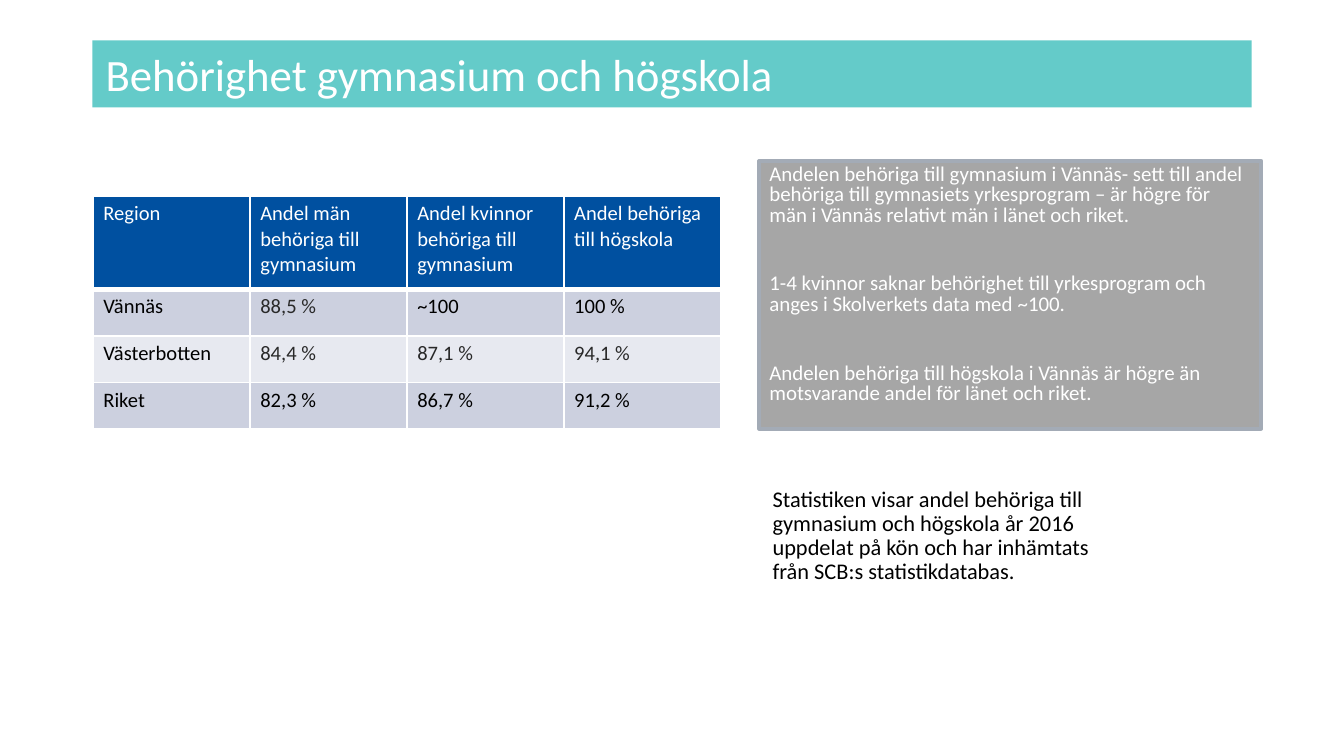
from dataclasses import dataclass

from lxml import etree
from pptx import Presentation
from pptx.dml.color import RGBColor
from pptx.enum import shapes, text
from pptx.oxml import ns
from pptx.util import Pt


@dataclass(frozen=True)
class Theme:
    font: str = "Calibri"
    white: str = "FFFFFF"
    black: str = "000000"
    dark: str = "292929"
    teal: str = "64CBC9"
    blue: str = "0050A0"
    band: str = "CCD0DF"
    pale: str = "E7E9F0"
    gray: str = "A6A6A6"
    edge: str = "A3ABB6"
    title: float = 24
    note: float = 12
    fact: float = 11.2
    cell: float = 11


T = Theme()


def paint(fill, color):
    fill.solid()
    fill.fore_color.rgb = RGBColor.from_string(color)


def add_run(para, words, size, color):
    run = para.add_run()
    run.text = words
    run.font.name = T.font
    run.font.size = Pt(size)
    run.font.color.rgb = RGBColor.from_string(color)


def inset(part, side, top):
    part.margin_left = part.margin_right = Pt(side)
    part.margin_top = part.margin_bottom = Pt(top)


def add_panel(slide, box, color, anchor):
    """Filled rectangle with left-aligned text; returns shape and frame."""
    panel = slide.shapes.add_shape(shapes.MSO_SHAPE.RECTANGLE, *map(Pt, box))
    panel.shadow.inherit = False
    paint(panel.fill, color)
    panel.line.fill.background()
    frame = panel.text_frame
    frame.word_wrap = True
    frame.vertical_anchor = anchor
    frame.paragraphs[0].alignment = text.PP_ALIGN.LEFT
    return panel, frame


def add_title(slide, box):
    _, frame = add_panel(slide, box, T.teal, text.MSO_ANCHOR.MIDDLE)
    add_run(frame.paragraphs[0], "Behörighet gymnasium och högskola",
            T.title, T.white)


def set_edges(cell, widths):
    """Draw white borders; widths maps a side letter to points."""
    props = cell._tc.get_or_add_tcPr()
    for spot, (side, width) in enumerate(widths.items()):
        line = etree.Element(ns.qn(f"a:ln{side}"), w=str(Pt(width)))
        fill = etree.SubElement(line, ns.qn("a:solidFill"))
        etree.SubElement(fill, ns.qn("a:srgbClr"), val=T.white)
        props.insert(spot, line)


def add_grid(slide, box):
    rows = [
        ("Region", "Andel män behöriga till gymnasium",
         "Andel kvinnor behöriga till gymnasium",
         "Andel behöriga till högskola"),
        ("Vännäs", "88,5 %", "~100", "100 %"),
        ("Västerbotten", "84,4 %", "87,1 %", "94,1 %"),
        ("Riket", "82,3 %", "86,7 %", "91,2 %"),
    ]
    fills = [T.blue, T.band, T.pale, T.band]
    heights = [49.9, 25, 25, 25]
    soft = {(1, 1), (2, 1), (2, 2), (2, 3)}  # values in dark gray
    grid = slide.shapes.add_table(len(rows), len(rows[0]),
                                  *map(Pt, box)).table
    for col in grid.columns:
        col.width = Pt(box[2] / len(rows[0]))
    for r, row in enumerate(rows):
        grid.rows[r].height = Pt(heights[r])
        for c, words in enumerate(row):
            cell = grid.cell(r, c)
            inset(cell, 5.4, 2.7)
            paint(cell.fill, fills[r])
            set_edges(cell, {"L": 1, "R": 1, "T": 3 if r == 1 else 1,
                             "B": 3 if r == 0 else 1})
            color = (T.white if r == 0 else
                     T.dark if (r, c) in soft else T.black)
            add_run(cell.text_frame.paragraphs[0], words, T.cell, color)


def add_facts(slide, box):
    panel, frame = add_panel(slide, box, T.gray, text.MSO_ANCHOR.TOP)
    paint(panel.line.fill, T.edge)
    panel.line.width = Pt(2)
    inset(frame, 5.4, 2.7)
    facts = [
        ["Andelen behöriga till gymnasium i Vännäs- sett till andel "
         "behöriga till gymnasiets yrkesprogram – är högre för män "
         "i Vännäs relativt män i länet och riket."],
        ["1-4 kvinnor saknar behörighet till yrkesprogram och anges i "
         "Skolverkets data med", " ", "~100."],
        ["Andelen behöriga till högskola i Vännäs är högre än "
         "motsvarande andel för länet och riket."],
    ]
    for i, parts in enumerate(facts):
        para = frame.add_paragraph() if i else frame.paragraphs[0]
        para.alignment = text.PP_ALIGN.LEFT
        para.line_spacing = 0.8
        para.space_before = Pt(26 if i else 0)
        for part in parts:
            if part == " ":
                add_run(para, part, T.note, T.black)
            else:
                add_run(para, part, T.fact, T.white)


def add_note(slide, box):
    frame = slide.shapes.add_textbox(*map(Pt, box)).text_frame
    frame.word_wrap = True
    para = frame.paragraphs[0]
    para.line_spacing = 0.9
    add_run(para, "Statistiken visar andel behöriga till gymnasium och "
            "högskola år 2016 uppdelat på kön och har inhämtats från "
            "SCB:s statistikdatabas.", T.note, T.black)


def main():
    deck = Presentation()
    deck.slide_width, deck.slide_height = Pt(720), Pt(405)
    slide = deck.slides.add_slide(deck.slide_layouts[6])
    add_title(slide, (49.5, 21.6, 621, 36))
    add_grid(slide, (50, 105, 336.4, 124.9))
    add_note(slide, (406.8, 257.8, 196.6, 69))
    add_facts(slide, (406.8, 86.2, 268.9, 143.5))
    deck.save("out.pptx")


if __name__ == "__main__":
    main()
